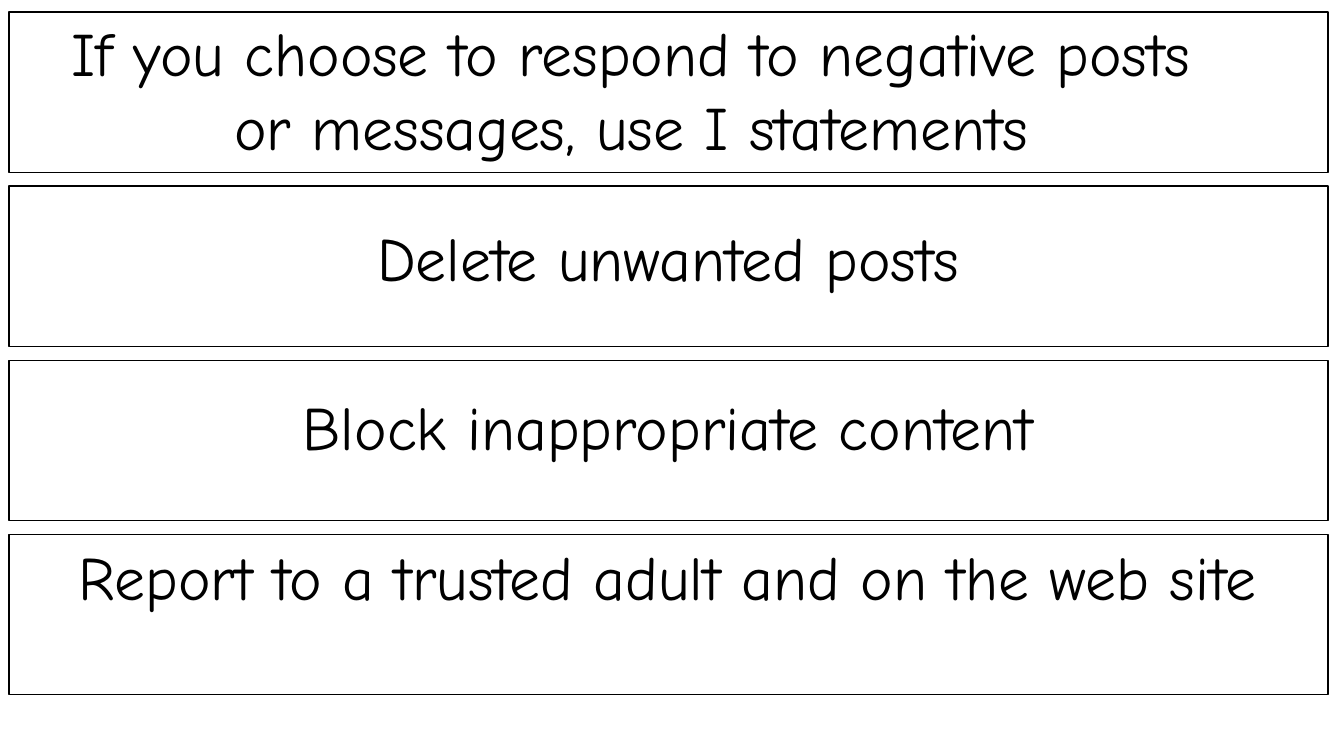
from pptx import Presentation
from pptx.dml.color import RGBColor as RGB
from pptx.enum.shapes import MSO_SHAPE as SHAPE
from pptx.enum.text import MSO_AUTO_SIZE as AUTO, PP_ALIGN as ALIGN
from pptx.util import Inches, Pt

COLORS = {"paper": "FFFFFF", "ink": "000000"}
FONT = "Comic Neue"

# Four equal strips stacked down the slide, in inches
LEFT, TOP, WIDTH, HEIGHT, PITCH = 0.09, 0.12, 13.08, 1.59, 1.727

# Text, then left, top, width and height of its box
MESSAGES = [
    ("If you choose to respond to negative posts or messages, use I statements",
     0.37, 0.1, 11.79, 1.58),
    ("Delete unwanted posts", 1.09, 2.13, 11.08, 0.84),
    ("Block inappropriate content", 1.09, 3.81, 11.08, 0.84),
    ("Report to a trusted adult and on the web site", 0.29, 5.3, 12.67, 1.58),
]


def add_text(slide, text, box, size=44, color="ink", align=ALIGN.CENTER):
    sp = slide.shapes.add_textbox(*map(Inches, box))
    tf = sp.text_frame
    tf.word_wrap = True
    tf.auto_size = AUTO.SHAPE_TO_FIT_TEXT
    p = tf.paragraphs[0]
    p.alignment = align
    r = p.add_run()
    r.text = text
    r.font.name = FONT
    r.font.size = Pt(size)
    r.font.color.rgb = RGB.from_string(COLORS[color])


prs = Presentation()
prs.slide_width, prs.slide_height = Inches(13.33), Inches(7.5)
slide = prs.slides.add_slide(prs.slide_layouts[6])

for row in range(len(MESSAGES)):
    strip = (LEFT, TOP + row * PITCH, WIDTH, HEIGHT)
    sp = slide.shapes.add_shape(SHAPE.RECTANGLE, *map(Inches, strip))
    sp.shadow.inherit = False
    sp.fill.solid()
    sp.fill.fore_color.rgb = RGB.from_string(COLORS["paper"])
    sp.line.color.rgb = RGB.from_string(COLORS["ink"])
    sp.line.width = Pt(1)

for text, *box in MESSAGES:
    add_text(slide, text, box)

prs.save("out.pptx")
